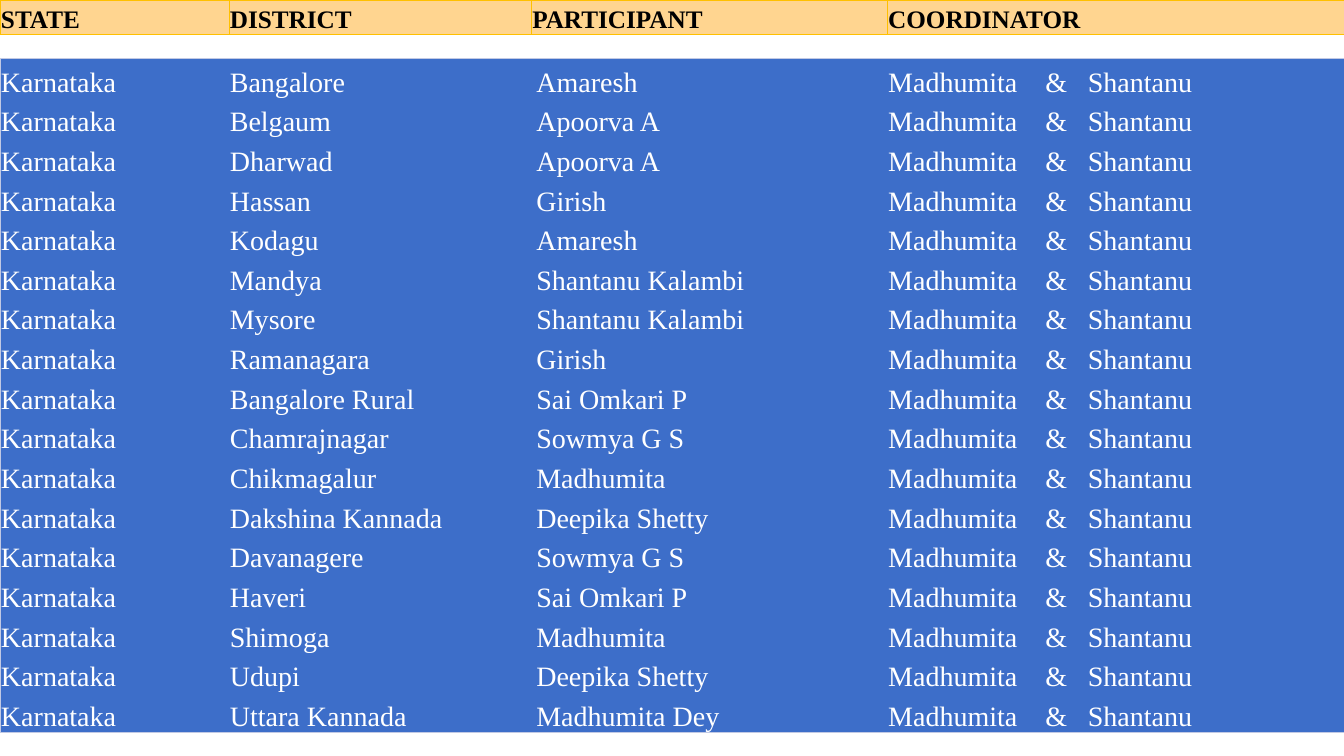
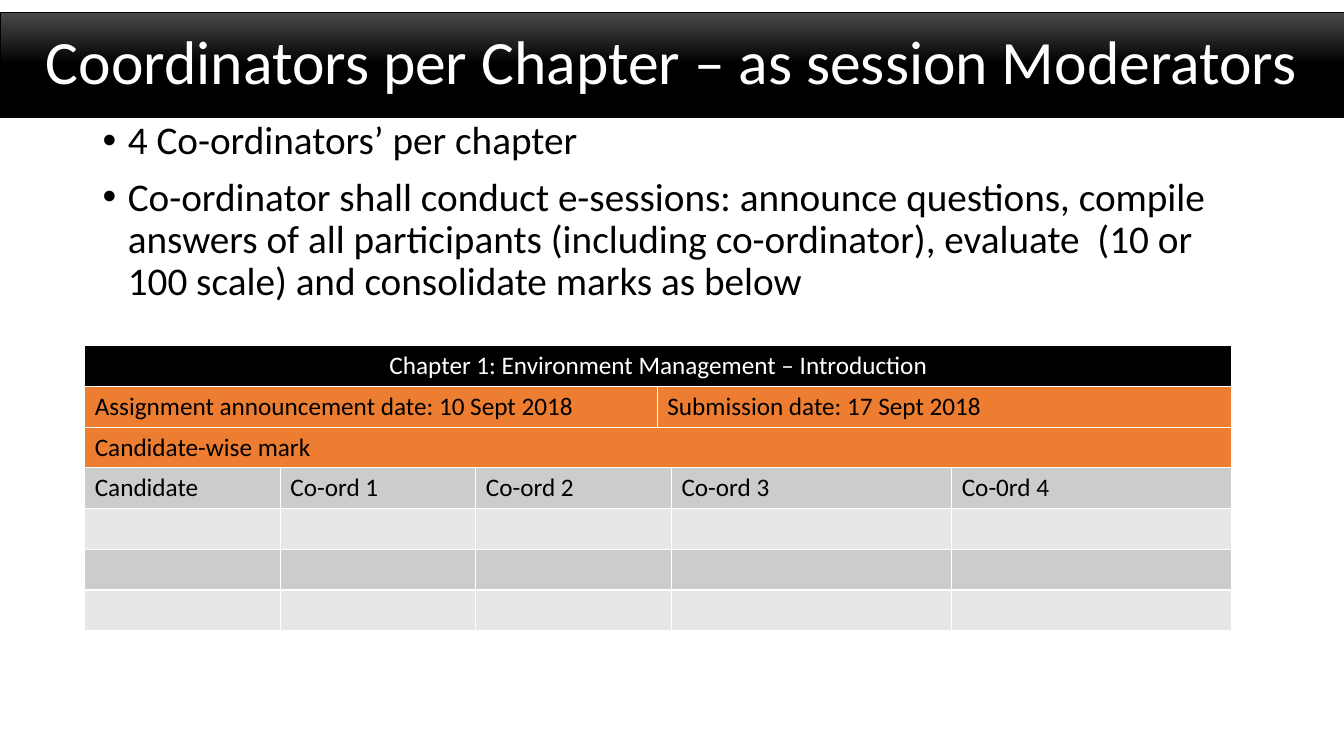
from dataclasses import dataclass
from typing import Any, Optional

from lxml import etree
from pptx import Presentation
from pptx.dml.color import RGBColor
from pptx.enum import shapes, text as txt
from pptx.oxml import ns
from pptx.util import Inches, Pt


@dataclass(frozen=True)
class Theme:
    black: str = "000000"
    white: str = "FFFFFF"
    gray: str = "4B4B4B"
    gold: str = "FFC000"
    sand: str = "FFD590"
    blue: str = "3D6EC9"
    pale: str = "C1C9E4"
    orange: str = "ED7D31"
    dark: str = "CCCCCC"
    light: str = "E7E7E7"
    serif: str = "Times New Roman"
    sans: str = "Calibri"
    title: int = 44
    body: int = 28
    list: int = 20
    small: int = 18


@dataclass(frozen=True)
class Cell:
    text: str = ""
    fill: str = ""
    ink: str = "000000"
    span: int = 1
    align: Any = None


@dataclass(frozen=True)
class Grid:
    left: float
    top: float
    cols: tuple[float, ...]
    high: float
    rows: list[list[Cell]]
    font: str
    size: int
    edge: str
    width: float
    inner: bool = True
    tight: bool = False
    bold: bool = False
    tabs: tuple[float, ...] = ()


T = Theme()
WIDE = 13.33
PLAIN = "{2D5ABB26-0587-4C30-8999-92F81FD0307C}"
HEADS = ("STATE", "DISTRICT", "PARTICIPANT", "COORDINATOR")
STATE = "Karnataka"
LEADS = "Madhumita\t&\tShantanu"
PEOPLE = (
    ("Bangalore", "Amaresh"),
    ("Belgaum", "Apoorva A"),
    ("Dharwad", "Apoorva A"),
    ("Hassan", "Girish"),
    ("Kodagu", "Amaresh"),
    ("Mandya", "Shantanu Kalambi"),
    ("Mysore", "Shantanu Kalambi"),
    ("Ramanagara", "Girish"),
    ("Bangalore Rural", "Sai Omkari P"),
    ("Chamrajnagar", "Sowmya G S"),
    ("Chikmagalur", "Madhumita"),
    ("Dakshina Kannada", "Deepika Shetty"),
    ("Davanagere", "Sowmya G S"),
    ("Haveri", "Sai Omkari P"),
    ("Shimoga", "Madhumita"),
    ("Udupi", "Deepika Shetty"),
    ("Uttara Kannada", "Madhumita Dey"),
)
TITLE = "Coordinators per Chapter – as session Moderators"
POINTS = (
    "4 Co-ordinators’ per chapter",
    "Co-ordinator shall conduct e-sessions: announce questions, compile answers "
    "of all participants (including co-ordinator), evaluate  (10 or 100 scale) "
    "and consolidate marks as below",
)


def node(top: Any, tag: str, **attrs: Any) -> Any:
    return etree.SubElement(top, ns.qn(tag), {k: str(v) for k, v in attrs.items()})


def put(frame: Any, *lines: str, font: str, size: int, ink: str,
        bold: bool = False, align: Any = None, space: Optional[float] = None,
        before: int = 0, bullet: str = "", tabs: tuple[float, ...] = ()) -> None:
    for n, line in enumerate(lines):
        para = frame.add_paragraph() if n else frame.paragraphs[0]
        if align is not None:
            para.alignment = align
        if space:
            para.line_spacing = space
        if before:
            para.space_before = Pt(before)
        props = para._p.get_or_add_pPr()
        if bullet:
            props.set("marL", str(Inches(0.25)))
            props.set("indent", str(Inches(-0.25)))
            node(props, "a:buFont", typeface="Arial")
            node(props, "a:buChar", char=bullet)
        if "\t" in line:
            stops = node(props, "a:tabLst")
            for pos in tabs:
                node(stops, "a:tab", pos=Inches(pos), algn="l")
        run = para.add_run()
        run.text = line
        run.font.name = font
        run.font.size = Pt(size)
        run.font.bold = bold
        run.font.color.rgb = RGBColor.from_string(ink)


def edge(cell: Any, sides: str, color: str, width: float) -> None:
    props = cell._tc.get_or_add_tcPr()
    for side in "LRTB":
        if side in sides:
            line = node(props, f"a:ln{side}", w=Pt(width))
            node(node(line, "a:solidFill"), "a:srgbClr", val=color)


def draw(slide: Any, grid: Grid) -> None:
    count = len(grid.rows)
    frame = slide.shapes.add_table(
        count, len(grid.cols), Inches(grid.left), Inches(grid.top),
        Inches(sum(grid.cols)), Inches(grid.high))
    table = frame.table
    table.first_row = table.horz_banding = False
    table._tbl.tblPr.find(ns.qn("a:tableStyleId")).text = PLAIN
    for col, width in zip(table.columns, grid.cols):
        col.width = Inches(width)
    for r, row in enumerate(grid.rows):
        table.rows[r].height = Inches(grid.high / count)
        c = 0
        for item in row:
            last = c + item.span - 1
            cell = table.cell(r, c)
            if item.span > 1:
                cell.merge(table.cell(r, last))
            for n in range(c, last + 1):
                part = table.cell(r, n)
                tests = {"L": n == 0, "R": n == len(grid.cols) - 1,
                         "T": r == 0, "B": r == count - 1}
                sides = "".join(s for s, on in tests.items() if on or grid.inner)
                edge(part, sides, grid.edge, grid.width)
                part.fill.solid()
                part.fill.fore_color.rgb = RGBColor.from_string(item.fill)
            if grid.tight:
                cell.margin_left = cell.margin_right = cell.margin_top = Inches(0.01)
                cell.margin_bottom = 0
                cell.vertical_anchor = txt.MSO_ANCHOR.BOTTOM
            if item.text:
                put(cell.text_frame, item.text, font=grid.font, size=grid.size,
                    ink=item.ink, bold=grid.bold, align=item.align, tabs=grid.tabs)
            c = last + 1


def roster(slide: Any) -> None:
    draw(slide, Grid(0, 0, (2.27, 3, 3.53, 4.53), 0.34,
                     [[Cell(head, T.sand) for head in HEADS]],
                     T.serif, T.small, T.gold, 0.5, tight=True, bold=True))
    rows = [[Cell(word, T.blue, T.white) for word in (STATE, place, name, LEADS)]
            for place, name in PEOPLE]
    draw(slide, Grid(0, 0.58, (2.27, 3.04, 3.49, 4.53), 6.69, rows,
                     T.serif, T.list, T.pale, 0.5, inner=False, tight=True,
                     tabs=(1.56, 1.98)))


def banner(slide: Any, title: str) -> None:
    band = slide.shapes.add_shape(shapes.MSO_SHAPE.RECTANGLE, 0, Inches(0.12),
                                  Inches(WIDE), Inches(1.04))
    band.shadow.inherit = False
    band.fill.gradient()
    band.fill.gradient_angle = 270
    for stop, color, pos in zip(band.fill.gradient_stops, (T.gray, T.black), (0, 0.5)):
        stop.color.rgb = RGBColor.from_string(color)
        stop.position = pos
    band.line.color.rgb = RGBColor.from_string(T.black)
    band.line.width = Pt(0.5)
    band.text_frame.word_wrap = True
    band.text_frame.vertical_anchor = txt.MSO_ANCHOR.MIDDLE
    put(band.text_frame, title, font=T.sans, size=T.title, ink=T.white,
        align=txt.PP_ALIGN.CENTER, space=0.9)


def chapter(slide: Any) -> None:
    banner(slide, TITLE)
    box = slide.shapes.add_textbox(Inches(0.92), Inches(1.15), Inches(11.5), Inches(5.61))
    box.text_frame.word_wrap = True
    put(box.text_frame, *POINTS, font=T.sans, size=T.body, ink=T.black,
        space=0.9, before=10, bullet="•")
    heads = ("Candidate", "Co-ord 1", "Co-ord 2", "Co-ord 3", "Co-0rd 4")
    blank = ("",) * len(heads)
    rows = [
        [Cell("Chapter 1: Environment Management – Introduction", T.black, T.white,
              6, txt.PP_ALIGN.CENTER)],
        [Cell("Assignment announcement date: 10 Sept 2018", T.orange, span=3),
         Cell("Submission date: 17 Sept 2018", T.orange, span=3)],
        [Cell("Candidate-wise mark", T.orange, span=6)],
    ]
    for n, words in enumerate((heads, blank, blank, blank)):
        fill = T.light if n % 2 else T.dark
        rows.append([Cell(word, fill, span=2 if c == 2 else 1)
                     for c, word in enumerate(words)])
    draw(slide, Grid(0.84, 3.43, (1.94, 1.94, 1.8, 0.14, 2.78, 2.78), 2.83, rows,
                     T.sans, T.small, T.white, 1))


def main() -> None:
    deck = Presentation()
    deck.slide_width, deck.slide_height = Inches(WIDE), Inches(7.5)
    for build in (roster, chapter):
        build(deck.slides.add_slide(deck.slide_layouts[6]))
    deck.save("out.pptx")


if __name__ == "__main__":
    main()
